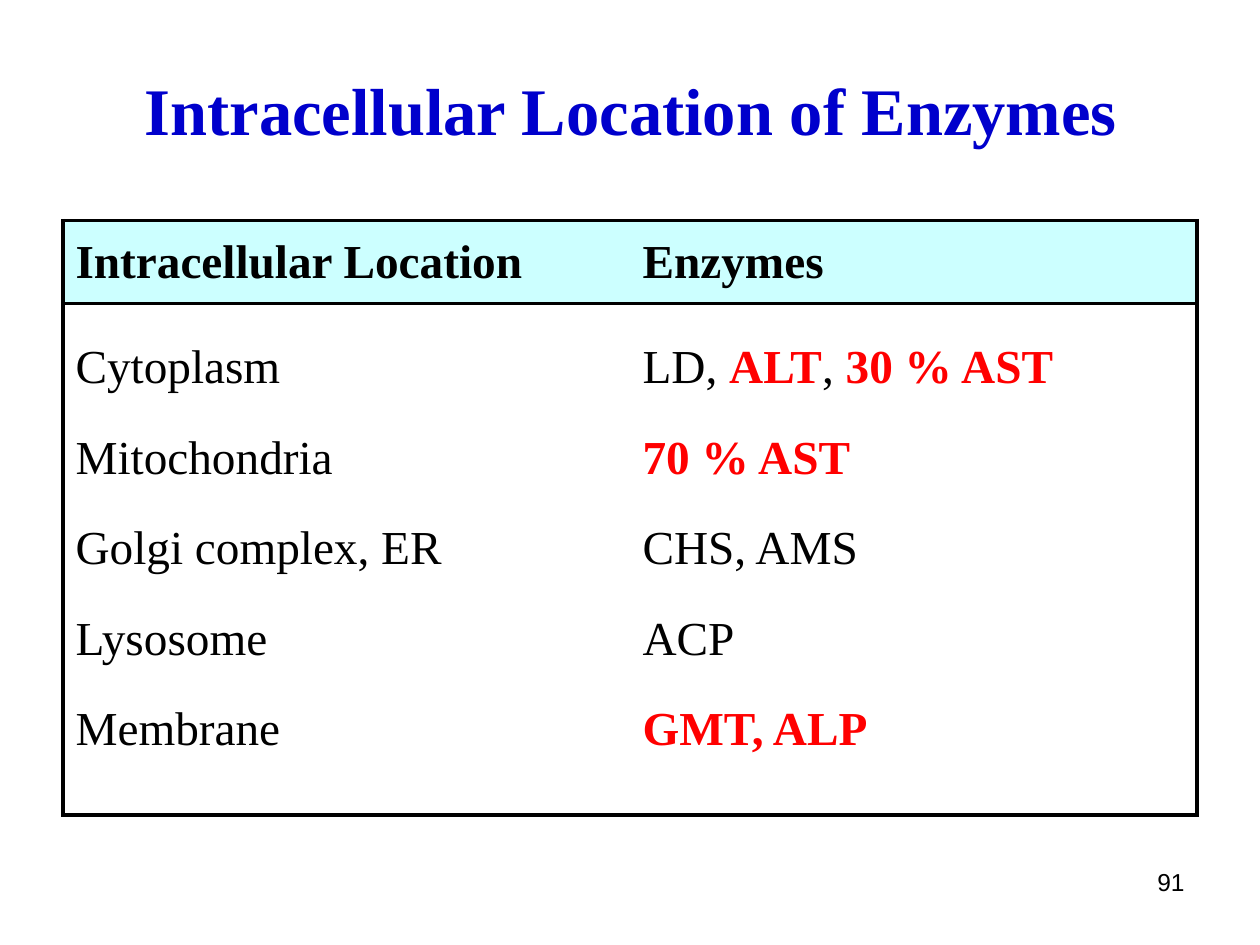
from lxml.etree import SubElement
from pptx import Presentation
from pptx.dml.color import RGBColor
from pptx.enum.text import MSO_ANCHOR, PP_ALIGN
from pptx.oxml.ns import qn
from pptx.util import Pt

COLORS = {"text": "000000", "title": "0000CC", "accent": "FF0000",
          "header": "CCFFFF", "border": "000000"}
BODY = {"name": "Times New Roman", "size": Pt(27), "bold": False}
BOLD = {**BODY, "bold": True}
TITLE = {**BOLD, "size": Pt(38)}
NUMBER = {"name": "Arial", "size": Pt(14), "bold": False}


def add_run(paragraph, text, font_format, color):
    run = paragraph.add_run()
    run.text = text
    for attribute, value in font_format.items():
        setattr(run.font, attribute, value)
    run.font.color.rgb = RGBColor.from_string(COLORS[color])


def add_border(cell, side, visible):
    properties = cell._tc.get_or_add_tcPr()
    line = SubElement(properties, qn(f"a:ln{side}"), w=str(Pt(2.25)))
    if visible:
        fill = SubElement(line, qn("a:solidFill"))
        SubElement(fill, qn("a:srgbClr"), val=COLORS["border"])
    else:
        SubElement(line, qn("a:noFill"))


presentation = Presentation()
presentation.slide_width = Pt(720)
presentation.slide_height = Pt(540)
slide = presentation.slides.add_slide(presentation.slide_layouts[6])

text_boxes = [
    ("Intracellular Location of Enzymes", (36.7, 25.9, 648, 72.7),
     TITLE, "title", PP_ALIGN.CENTER, MSO_ANCHOR.MIDDLE),
    ("91", (516, 491.8, 168, 37.4), NUMBER, "text", PP_ALIGN.RIGHT, MSO_ANCHOR.TOP),
]
for text, box, font_format, color, alignment, anchor in text_boxes:
    frame = slide.shapes.add_textbox(*map(Pt, box)).text_frame
    frame.word_wrap = True
    frame.vertical_anchor = anchor
    frame.paragraphs[0].alignment = alignment
    add_run(frame.paragraphs[0], text, font_format, color)

plain = (BODY, "text")
heading = (BOLD, "text")
marker = (BOLD, "accent")
locations = ["Cytoplasm", "Mitochondria", "Golgi complex, ER", "Lysosome", "Membrane"]
enzymes = [
    [("LD, ", plain), ("ALT", marker), (",", plain), (" 30 % AST", marker)],
    [("70 % AST", marker)],
    [("CHS, AMS", plain)],
    [("ACP", plain)],
    [("GMT, ALP", marker)],
]
rows = [
    [[[("Intracellular Location", heading)]], [[("Enzymes", heading)]]],
    [[[(location, plain)] for location in locations], enzymes],
]

table = slide.shapes.add_table(2, 2, Pt(36), Pt(126), Pt(648), Pt(339.8)).table
table.first_row = False
table.horz_banding = False
for row, height in zip(table.rows, (47.5, 292.3)):
    row.height = Pt(height)

for row_index, row in enumerate(rows):
    is_header = row_index == 0
    for column_index, paragraphs in enumerate(row):
        cell = table.cell(row_index, column_index)
        cell.vertical_anchor = MSO_ANCHOR.MIDDLE if is_header else MSO_ANCHOR.TOP
        for side, visible in (("L", column_index == 0), ("R", column_index == 1),
                              ("T", True), ("B", True)):
            add_border(cell, side, visible)
        if is_header:
            cell.fill.solid()
            cell.fill.fore_color.rgb = RGBColor.from_string(COLORS["header"])
        else:
            cell.fill.background()
        frame = cell.text_frame
        for index, runs in enumerate(paragraphs):
            paragraph = frame.paragraphs[0] if index == 0 else frame.add_paragraph()
            paragraph.space_before = Pt(3.8)
            paragraph.line_spacing = 1.0 if is_header else 1.6
            for text, (font_format, color) in runs:
                add_run(paragraph, text, font_format, color)

presentation.save("out.pptx")
